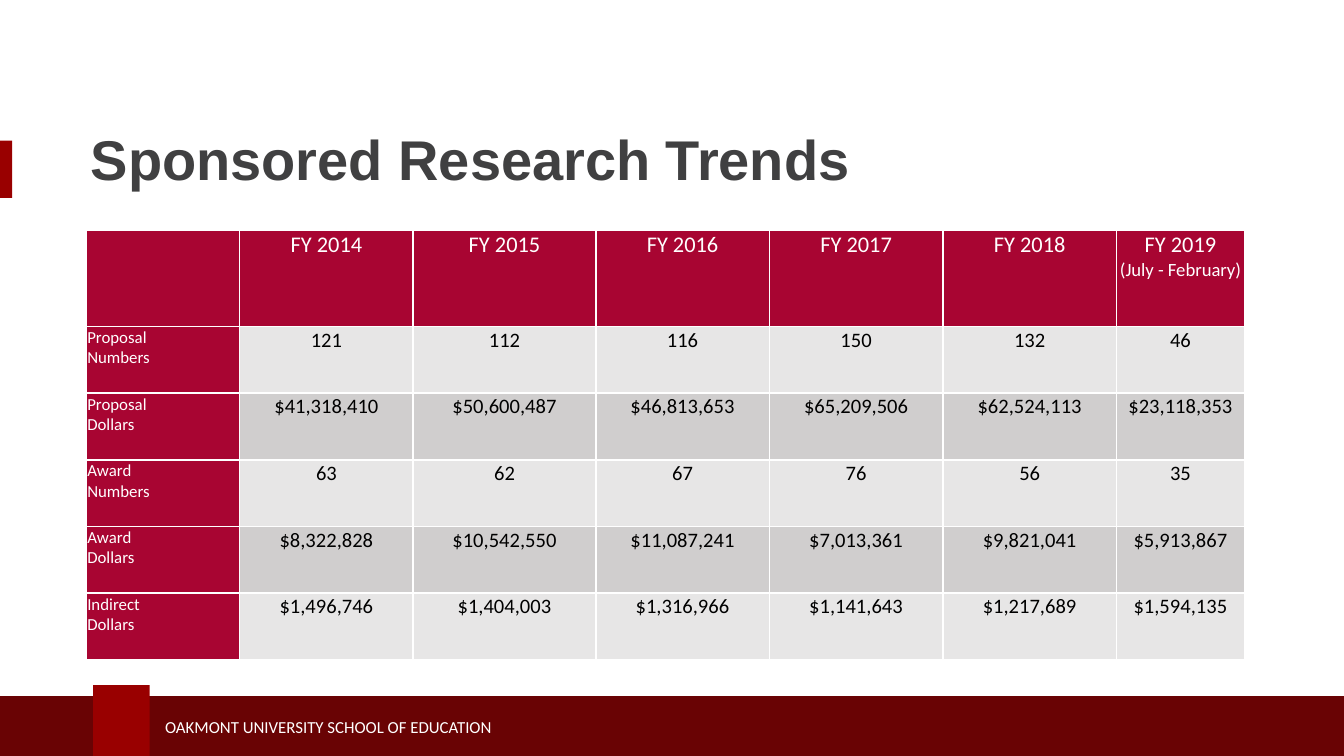
from lxml.etree import SubElement
from pptx import Presentation
from pptx.dml.color import RGBColor
from pptx.enum.shapes import MSO_SHAPE
from pptx.enum.text import MSO_ANCHOR, PP_ALIGN
from pptx.oxml.ns import qn
from pptx.util import Cm, Pt

WHITE, BLACK, GREY = "FFFFFF", "000000", "404041"
RED, DARK, CRIMSON = "990000", "690304", "A80532"
BANDS = ["E7E6E6", "D0CECE"]

YEARS = [[("FY 2014", 12)], [("FY 2015", 12)], [("FY 2016", 12)],
         [("FY 2017", 12)], [("FY 2018", 12)],
         [("FY 2019", 12), ("(July - February)", 10)]]
ROWS = [
    ("Proposal Numbers", ["121", "112", "116", "150", "132", "46"]),
    ("Proposal Dollars", ["$41,318,410", "$50,600,487", "$46,813,653",
                          "$65,209,506", "$62,524,113", "$23,118,353"]),
    ("Award Numbers", ["63", "62", "67", "76", "56", "35"]),
    ("Award Dollars", ["$8,322,828", "$10,542,550", "$11,087,241",
                       "$7,013,361", "$9,821,041", "$5,913,867"]),
    ("Indirect Dollars", ["$1,496,746", "$1,404,003", "$1,316,966",
                          "$1,141,643", "$1,217,689", "$1,594,135"]),
]
WIDTHS = [2.9, 3.28, 3.45, 3.28, 3.28, 3.28, 2.42]
HEIGHTS = [1.82] + [1.26] * len(ROWS)


def color(code):
    return RGBColor.from_string(code)


class Painter:
    def __init__(self, slide, font):
        self.slide = slide
        self.font = font

    def block(self, x, y, w, h, fill):
        box = self.slide.shapes.add_shape(
            MSO_SHAPE.RECTANGLE, Cm(x), Cm(y), Cm(w), Cm(h))
        box.shadow.inherit = False
        box.fill.solid()
        box.fill.fore_color.rgb = color(fill)
        box.line.fill.background()

    def run(self, para, text, size, ink, font=None, bold=False):
        run = para.add_run()
        run.text = text
        run.font.size = Pt(size)
        run.font.name = font or self.font
        run.font.bold = bold
        run.font.color.rgb = color(ink)

    def label(self, x, y, w, h, text, size, ink, **style):
        frame = self.slide.shapes.add_textbox(
            Cm(x), Cm(y), Cm(w), Cm(h)).text_frame
        frame.word_wrap = True
        frame.vertical_anchor = MSO_ANCHOR.MIDDLE
        para = frame.paragraphs[0]
        self.run(para, text, size, ink, **style)
        return para

    def grid(self, x, y, widths, heights):
        table = self.slide.shapes.add_table(
            len(heights), len(widths), Cm(x), Cm(y),
            Cm(sum(widths)), Cm(sum(heights))).table
        for col, width in zip(table.columns, widths):
            col.width = Cm(width)
        for row, height in zip(table.rows, heights):
            row.height = Cm(height)
        return table

    def border(self, cell):
        props = cell._tc.get_or_add_tcPr()
        for side in ("a:lnL", "a:lnR", "a:lnT", "a:lnB"):
            line = SubElement(props, qn(side), w=str(Pt(1)))
            fill = SubElement(line, qn("a:solidFill"))
            SubElement(fill, qn("a:srgbClr"), val=WHITE)

    def cell(self, cell, lines, fill, ink, align=PP_ALIGN.CENTER):
        """Fill one table cell; lines holds a (text, size) pair per line."""
        self.border(cell)
        cell.fill.solid()
        cell.fill.fore_color.rgb = color(fill)
        cell.margin_left = cell.margin_right = cell.margin_top = Cm(0.02)
        cell.margin_bottom = 0
        para = cell.text_frame.paragraphs[0]
        para.alignment = align
        for i, (text, size) in enumerate(lines):
            if i:
                para.add_line_break()
            self.run(para, text, size, ink)


def main():
    deck = Presentation()
    deck.slide_width, deck.slide_height = Cm(25.4), Cm(14.29)
    slide = deck.slides.add_slide(deck.slide_layouts[6])
    paint = Painter(slide, "Calibri")

    paint.block(0, 2.66, 0.23, 1.08, RED)
    paint.block(-0.08, 13.16, 25.63, 1.27, DARK)
    paint.block(1.76, 12.95, 1.07, 1.47, RED)
    paint.label(2.87, 13.41, 10.03, 0.64,
                "OAKMONT UNIVERSITY SCHOOL OF EDUCATION", 9, WHITE)
    title = paint.label(1.47, 2.11, 22.23, 1.93, "Sponsored Research Trends",
                        30, GREY, font="Arial", bold=True)
    title.line_spacing = 0.9

    table = paint.grid(1.63, 4.35, WIDTHS, HEIGHTS)
    for c, lines in enumerate([[]] + YEARS):
        paint.cell(table.cell(0, c), lines, CRIMSON, WHITE)
    for r, (name, values) in enumerate(ROWS, 1):
        words = [(word, 9) for word in name.split()]
        paint.cell(table.cell(r, 0), words, CRIMSON, WHITE, PP_ALIGN.LEFT)
        band = BANDS[(r - 1) % 2]
        for c, value in enumerate(values, 1):
            paint.cell(table.cell(r, c), [(value, 11)], band, BLACK)

    deck.save("out.pptx")


if __name__ == "__main__":
    main()
